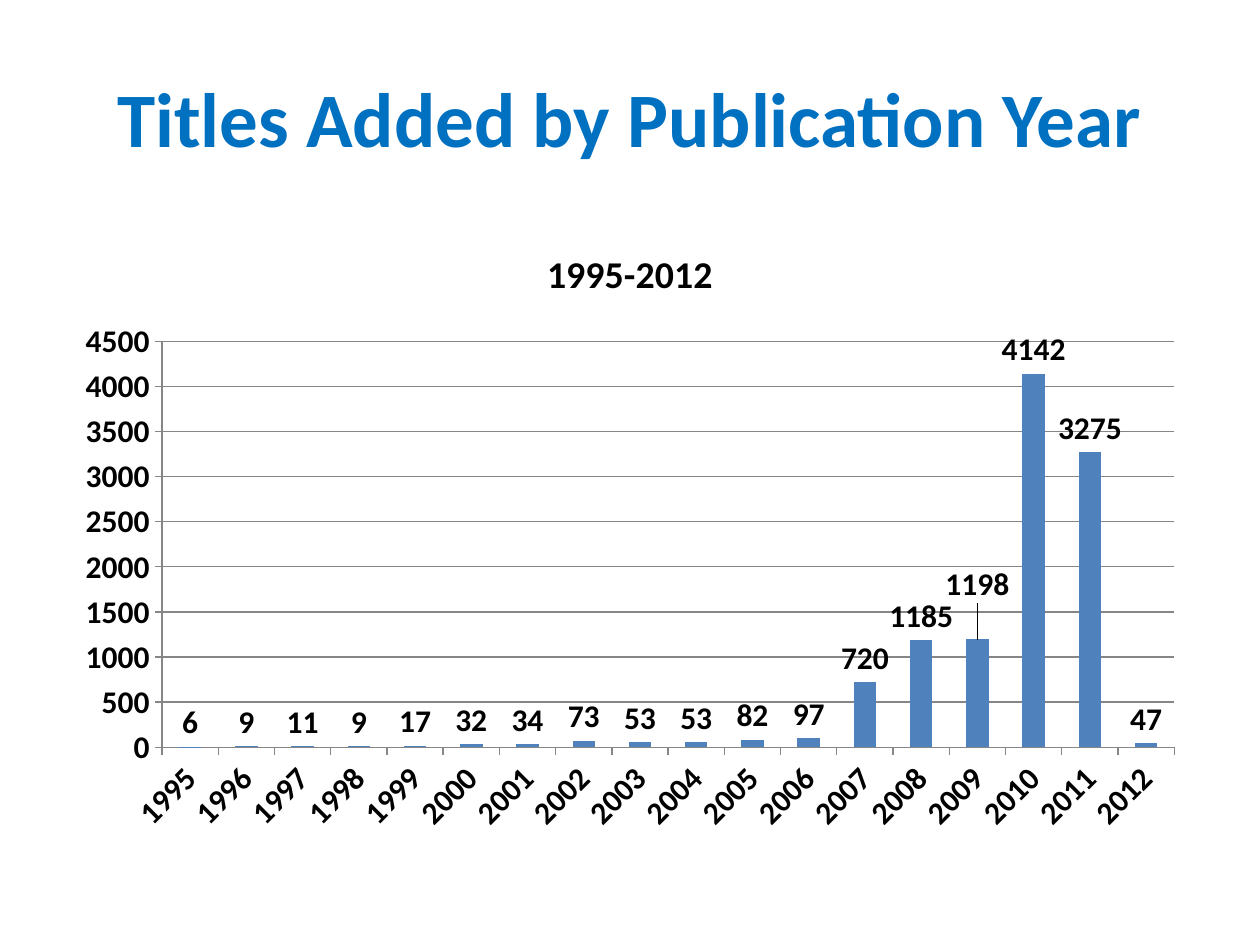
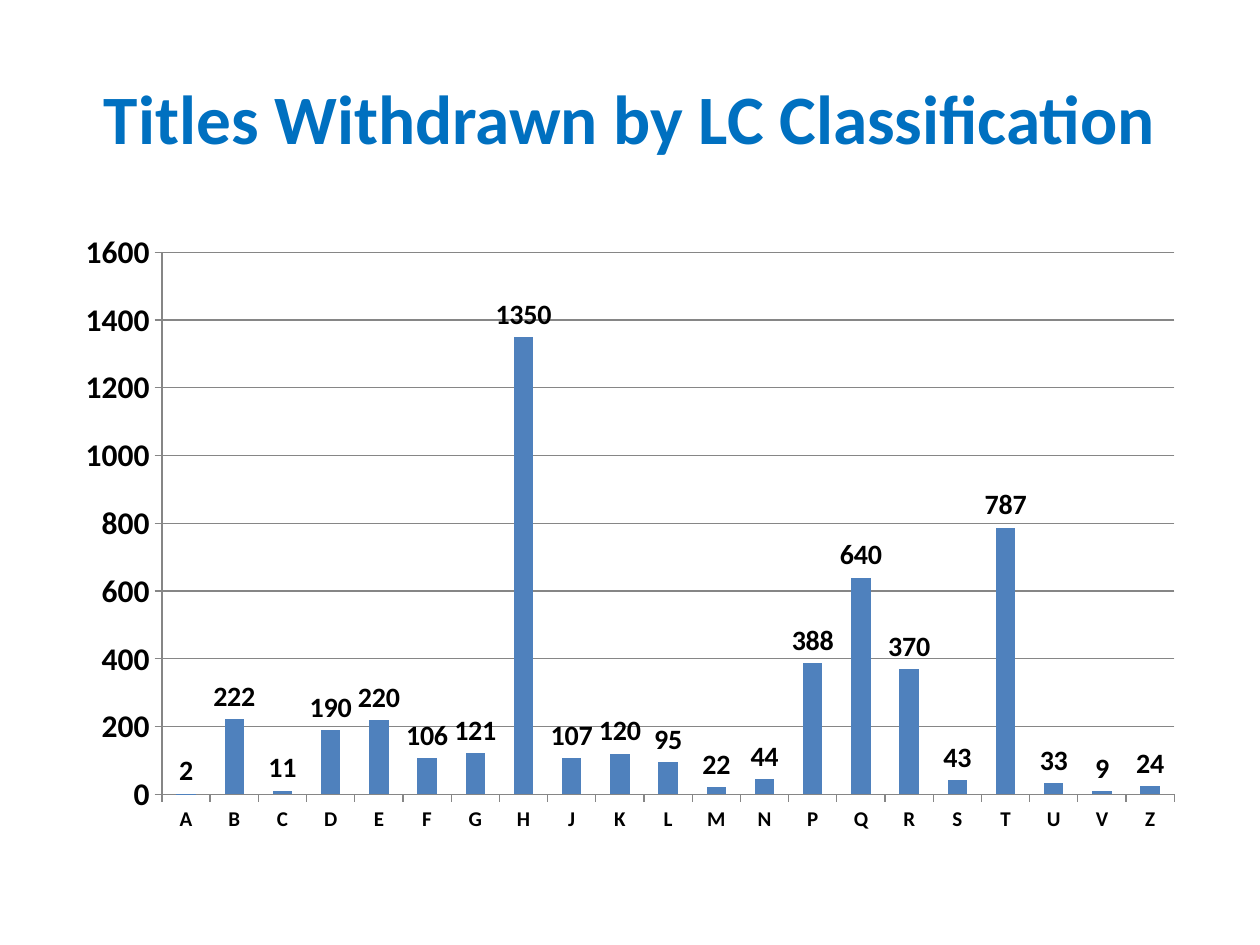
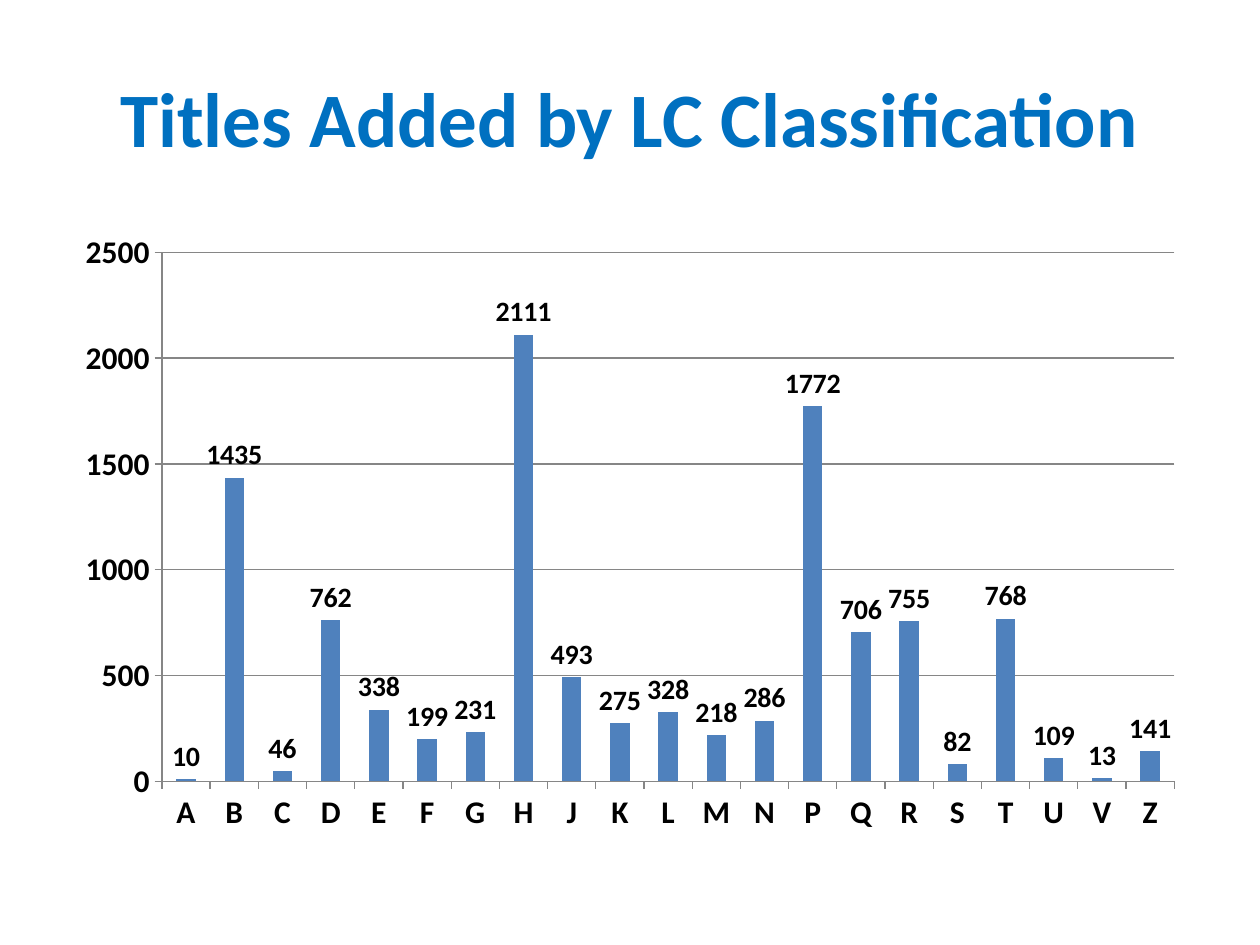
from dataclasses import dataclass
from typing import Optional

import lxml.etree
import pptx
import pptx.chart.data
import pptx.dml.color
import pptx.enum.chart
import pptx.enum.text
import pptx.oxml.ns
import pptx.util
from pptx.util import Cm


@dataclass(frozen=True)
class Theme:
    font: str = "Calibri"
    heading_color: str = "0070C0"
    text_color: str = "000000"
    bar_color: str = "4F81BD"
    line_color: str = "868686"
    heading_size: float = 44
    chart_title_size: float = 21.6
    chart_size: float = 18
    label_size: float = 16
    small_size: float = 12
    line_width: float = 0.75


@dataclass(frozen=True)
class Box:
    left: float
    top: float
    width: float
    height: float

    def lengths(self) -> tuple:
        return Cm(self.left), Cm(self.top), Cm(self.width), Cm(self.height)


@dataclass(frozen=True)
class RaisedLabel:
    """A data label moved vertically by a fraction of the chart height."""
    point: int
    offset: float


@dataclass(frozen=True)
class TitleCount:
    heading: str
    categories: tuple
    counts: tuple
    heading_size: float
    category_size: float
    label_size: float
    chart_title: Optional[str] = None
    raised_label: Optional[RaisedLabel] = None


THEME = Theme()
HEADING_BOX = Box(1.27, 0.76, 22.86, 3.18)
CHART_BOX = Box(1.27, 4.45, 22.86, 12.57)
LC_CLASSES = tuple("ABCDEFGHJKLMNPQRSTUVZ")

TITLE_COUNTS = (
    TitleCount(
        "Titles Added by Publication Year",
        tuple(str(year) for year in range(1995, 2013)),
        (6, 9, 11, 9, 17, 32, 34, 73, 53, 53, 82, 97, 720, 1185, 1198, 4142, 3275, 47),
        THEME.heading_size, THEME.chart_size, THEME.chart_size,
        chart_title="1995-2012",
        raised_label=RaisedLabel(14, -0.05),
    ),
    TitleCount(
        "Titles Withdrawn by LC Classification",
        LC_CLASSES,
        (2, 222, 11, 190, 220, 106, 121, 1350, 107, 120, 95,
         22, 44, 388, 640, 370, 43, 787, 33, 9, 24),
        39.6, THEME.small_size, THEME.label_size,
    ),
    TitleCount(
        "Titles Added by LC Classification",
        LC_CLASSES,
        (10, 1435, 46, 762, 338, 199, 231, 2111, 493, 275, 328,
         218, 286, 1772, 706, 755, 82, 768, 109, 13, 141),
        THEME.heading_size, THEME.chart_size, THEME.label_size,
    ),
)


def rgb(value: str) -> pptx.dml.color.RGBColor:
    return pptx.dml.color.RGBColor.from_string(value)


def style_font(font, size: float, color: str = THEME.text_color) -> None:
    font.name = THEME.font
    font.size = pptx.util.Pt(size)
    font.bold = True
    font.color.rgb = rgb(color)


def style_line(line) -> None:
    line.color.rgb = rgb(THEME.line_color)
    line.width = pptx.util.Pt(THEME.line_width)


def style_axis(axis, size: float) -> None:
    axis.major_tick_mark = pptx.enum.chart.XL_TICK_MARK.OUTSIDE
    axis.minor_tick_mark = pptx.enum.chart.XL_TICK_MARK.NONE
    style_font(axis.tick_labels.font, size)
    style_line(axis.format.line)


def add_heading(slide, count: TitleCount) -> None:
    frame = slide.shapes.add_textbox(*HEADING_BOX.lengths()).text_frame
    frame.word_wrap = True
    frame.vertical_anchor = pptx.enum.text.MSO_ANCHOR.MIDDLE
    paragraph = frame.paragraphs[0]
    paragraph.alignment = pptx.enum.text.PP_ALIGN.CENTER
    run = paragraph.add_run()
    run.text = count.heading
    style_font(run.font, count.heading_size, THEME.heading_color)


def raise_label(series, raised: RaisedLabel, size: float) -> None:
    label = series.points[raised.point].data_label
    style_font(label.font, size)
    label.position = pptx.enum.chart.XL_LABEL_POSITION.OUTSIDE_END
    qn = pptx.oxml.ns.qn
    label_xml = next(
        item for item in series.data_labels._element.findall(qn("c:dLbl"))
        if item.find(qn("c:idx")).get("val") == str(raised.point)
    )
    layout = lxml.etree.Element(qn("c:layout"))
    manual = lxml.etree.SubElement(layout, qn("c:manualLayout"))
    for axis, offset in (("x", 0), ("y", raised.offset)):
        lxml.etree.SubElement(manual, qn(f"c:{axis}")).set("val", str(offset))
    label_xml.find(qn("c:idx")).addnext(layout)


def add_count_chart(slide, count: TitleCount) -> None:
    data = pptx.chart.data.CategoryChartData()
    data.categories = count.categories
    data.add_series("Series 1", count.counts)
    chart = slide.shapes.add_chart(
        pptx.enum.chart.XL_CHART_TYPE.COLUMN_CLUSTERED, *CHART_BOX.lengths(), data
    ).chart
    style_font(chart.font, THEME.chart_size)
    chart.has_legend = False
    chart.has_title = count.chart_title is not None
    if count.chart_title:
        run = chart.chart_title.text_frame.paragraphs[0].add_run()
        run.text = count.chart_title
        style_font(run.font, THEME.chart_title_size)

    style_axis(chart.category_axis, count.category_size)
    style_axis(chart.value_axis, THEME.chart_size)
    chart.value_axis.has_major_gridlines = True
    style_line(chart.value_axis.major_gridlines.format.line)

    plot = chart.plots[0]
    plot.vary_by_categories = False
    plot.gap_width = 150
    series = plot.series[0]
    series.format.fill.solid()
    series.format.fill.fore_color.rgb = rgb(THEME.bar_color)
    labels = series.data_labels
    labels.show_value = True
    labels.position = pptx.enum.chart.XL_LABEL_POSITION.OUTSIDE_END
    style_font(labels.font, count.label_size)
    if count.raised_label:
        raise_label(series, count.raised_label, count.label_size)


def main() -> None:
    presentation = pptx.Presentation()
    presentation.slide_width = Cm(25.4)
    presentation.slide_height = Cm(19.05)
    blank_layout = presentation.slide_layouts[6]
    for count in TITLE_COUNTS:
        slide = presentation.slides.add_slide(blank_layout)
        add_heading(slide, count)
        add_count_chart(slide, count)
    presentation.save("out.pptx")


if __name__ == "__main__":
    main()
